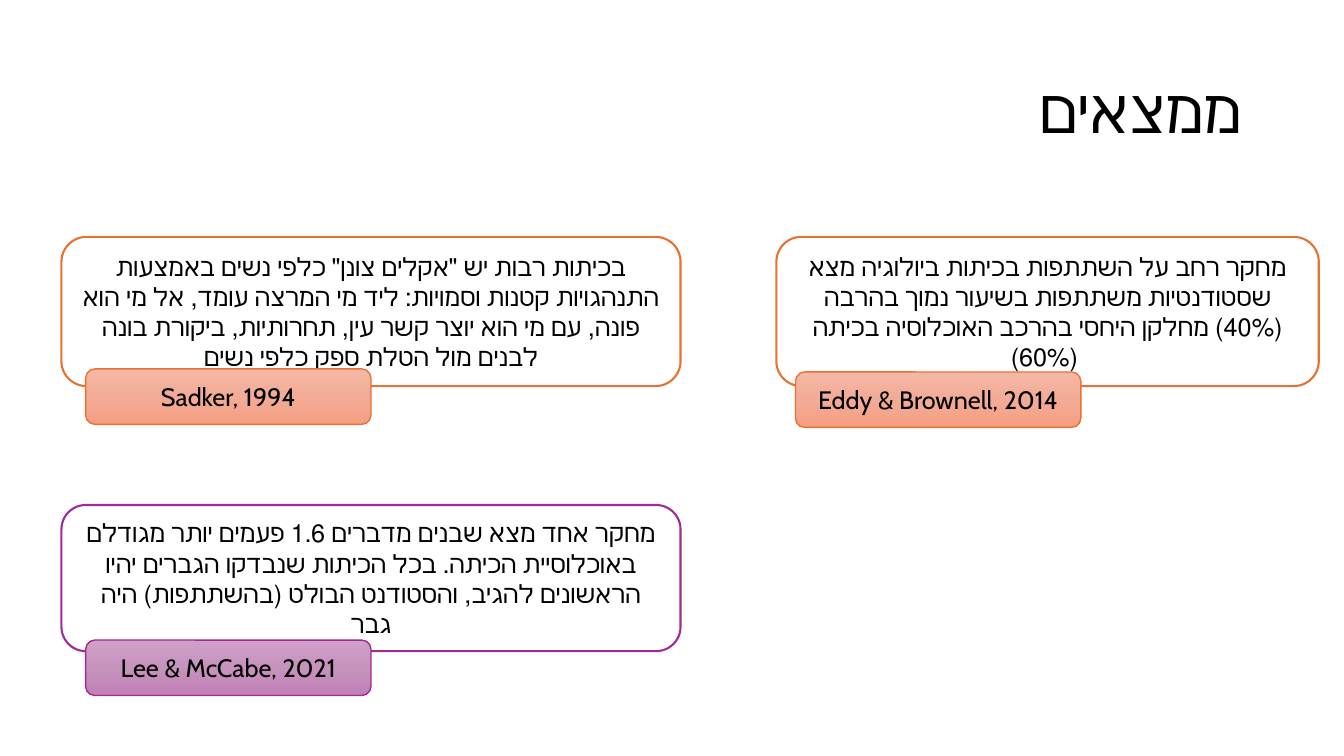
from copy import deepcopy

from pptx import Presentation
from pptx.dml.color import RGBColor
from pptx.enum.shapes import MSO_SHAPE
from pptx.enum.text import MSO_ANCHOR, PP_ALIGN
from pptx.oxml.ns import qn
from pptx.util import Inches, Pt

BLACK = RGBColor(0x00, 0x00, 0x00)
WHITE = RGBColor(0xFF, 0xFF, 0xFF)
ORANGE = RGBColor(0xE9, 0x71, 0x32)
PURPLE = RGBColor(0xA0, 0x2B, 0x93)
TINTS = {
    ORANGE: [RGBColor(0xF5, 0xB8, 0xA5), RGBColor(0xF2, 0xAB, 0x96), RGBColor(0xF5, 0x9E, 0x82)],
    PURPLE: [RGBColor(0xD0, 0xA0, 0xC8), RGBColor(0xC6, 0x93, 0xBD), RGBColor(0xC1, 0x7F, 0xB6)],
}
TITLE_FONT, BODY_FONT = "Karla", "Cabin"
LEFT, RIGHT = (0.61, 6.14, 0.85), (7.7, 5.38, 7.89)
TOP, BOTTOM = (2.35, 1.48), (5.01, 1.45)
TAG_SIZE = (2.83, 0.55)

FINDINGS = [
    (LEFT, TOP, 3.66, ORANGE, "Sadker, 1994",
     'בכיתות רבות יש "אקלים צונן" כלפי נשים באמצעות התנהגויות קטנות וסמויות: '
     "ליד מי המרצה עומד, אל מי הוא פונה, עם מי הוא יוצר קשר עין, תחרותיות, "
     "ביקורת בונה לבנים מול הטלת ספק כלפי נשים"),
    (RIGHT, TOP, 3.69, ORANGE, "Eddy & Brownell, 2014",
     "מחקר רחב על השתתפות בכיתות ביולוגיה מצא שסטודנטיות משתתפות בשיעור נמוך "
     "בהרבה (40%) מחלקן היחסי בהרכב האוכלוסיה בכיתה (60%) "),
    (LEFT, BOTTOM, 6.35, PURPLE, "Lee & McCabe, 2021",
     "מחקר אחד מצא שבנים מדברים 1.6 פעמים יותר מגודלם באוכלוסיית הכיתה. "
     "בכל הכיתות שנבדקו הגברים יהיו הראשונים להגיב, והסטודנט הבולט (בהשתתפות) היה גבר"),
]


def write(shape, text, font, size, alignment):
    """Put one paragraph of black text in a shape."""
    frame = shape.text_frame
    frame.text = text
    frame.word_wrap = True
    frame.vertical_anchor = MSO_ANCHOR.MIDDLE
    para = frame.paragraphs[0]
    para.alignment = alignment
    for span in para.runs:
        span.font.name = font
        span.font.size = Pt(size)
        span.font.color.rgb = BLACK
    return para


def add_title(page, text):
    """Place the right-to-left title."""
    title = page.shapes.title
    title.left, title.top = Inches(0.92), Inches(0.4)
    title.width, title.height = Inches(11.5), Inches(1.45)
    para = write(title, text, TITLE_FONT, 44, PP_ALIGN.RIGHT)
    para.line_spacing = 0.9
    para._p.get_or_add_pPr().set("rtl", "1")


def add_box(page, place, text, line_color, line_width):
    """Add an outlined rounded box with centred text."""
    box = page.shapes.add_shape(MSO_SHAPE.ROUNDED_RECTANGLE, *map(Inches, place))
    box.shadow.inherit = False
    box.fill.solid()
    box.fill.fore_color.rgb = WHITE
    box.line.color.rgb = line_color
    box.line.width = Pt(line_width)
    write(box, text, BODY_FONT, 18, PP_ALIGN.CENTER)
    return box


def shade(box, colors):
    """Fill a box with a three-step gradient from top to bottom."""
    box.fill.gradient()
    box.fill.gradient_angle = 270
    first = next(box._element.spPr.iter(qn("a:gs")))
    first.addnext(deepcopy(first))
    for index, (stop, color) in enumerate(zip(box.fill.gradient_stops, colors)):
        stop.position = index / 2
        stop.color.rgb = color


def add_finding(page, column, row, tag_top, color, source, text):
    """Add a finding with the tag of its source over the lower edge."""
    left, width, tag_left = column
    top, height = row
    add_box(page, (left, top, width, height), text, color, 1.5)
    tag = add_box(page, (tag_left, tag_top, *TAG_SIZE), source, color, 1)
    shade(tag, TINTS[color])


def main():
    """Build the slide and save it."""
    deck = Presentation()
    deck.slide_width, deck.slide_height = Inches(13.33), Inches(7.5)
    page = deck.slides.add_slide(deck.slide_layouts[5])
    add_title(page, "ממצאים")
    for finding in FINDINGS:
        add_finding(page, *finding)
    deck.save("out.pptx")


if __name__ == "__main__":
    main()
